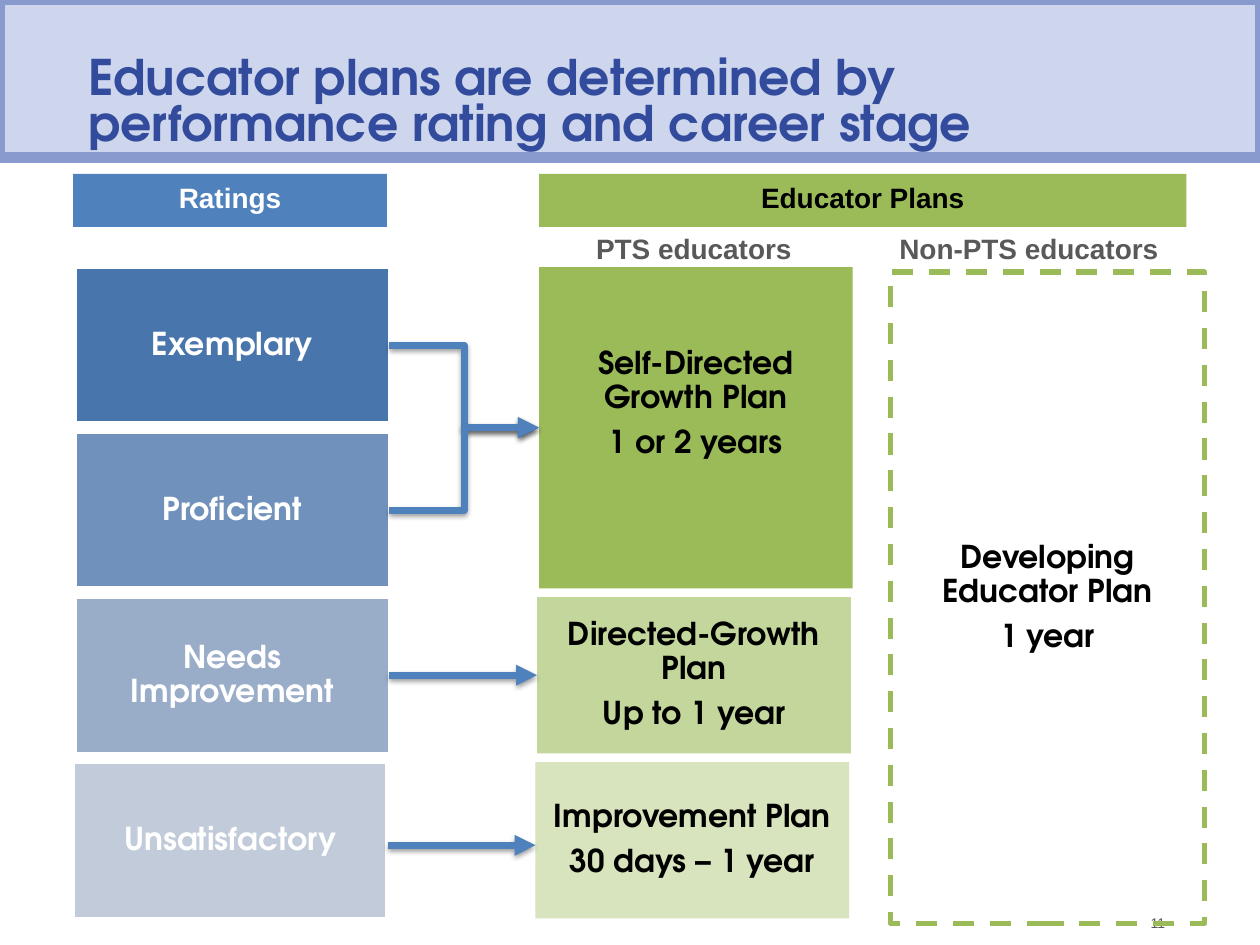
import pptx
import pptx.util
import pptx.dml.color
import pptx.enum.dml
import pptx.enum.shapes
import pptx.enum.text
import pptx.oxml
import pptx.oxml.ns

Pt = pptx.util.Pt
Align = pptx.enum.text.PP_ALIGN
Anchor = pptx.enum.text.MSO_ANCHOR
Link = pptx.enum.shapes.MSO_CONNECTOR

HEX = {
    "band": "CED6ED", "edge": "899ACE", "title": "334B9C",
    "blue": "4F81BD", "green": "9BBB59", "grey": "595959",
    "white": "FFFFFF", "black": "000000",
    "blue1": "4875AC", "blue2": "7091BB", "blue3": "9AADC8", "blue4": "C1CBD9",
    "green2": "C3D69B", "green3": "D7E4BD",
}
HEAD, BODY = "Arial", "TeX Gyre Adventor"

TITLE = "Educator plans are determined by performance rating and career stage"

# text, left, top, width, height, fill, font colour
HEADS = [
    ("Ratings", 41.8, 99.4, 179.3, 30.2, "blue", "white"),
    ("Educator Plans", 308, 99.4, 370, 30.2, "green", "black"),
    ("PTS educators", 308, 129, 177, 36, None, "grey"),
    ("Non-PTS educators", 498, 129, 180, 36, None, "grey"),
]

# text, left, fill
RATINGS = [
    ("Exemplary", 43.2, "blue1"),
    ("Proficient", 43.2, "blue2"),
    ("Needs Improvement", 43.2, "blue3"),
    ("Unsatisfactory", 42, "blue4"),
]

# lines, left, first row, rows spanned, fill, extra inset at the bottom
PLANS = [
    (("Self-Directed Growth Plan", "1 or 2 years"), 308, 0, 2, "green", 27),
    (("Directed-Growth Plan", "Up to 1 year"), 306.9, 2, 1, "green2", 0),
    (("Improvement Plan", "30 days – 1 year"), 305.9, 3, 1, "green3", 0),
]
OPEN_PLAN = ("Developing Educator Plan", "1 year")

# rating, plan, kind of link
JOINS = [(0, 0, Link.ELBOW), (1, 0, Link.ELBOW), (2, 1, Link.STRAIGHT)]

TOP, WIDE, HIGH, STEP = 152.6, 179.3, 89.3, 94.3

SHADOW = (
    '<a:effectLst %s><a:outerShdw blurRad="39370" dist="20320" dir="5400000" '
    'rotWithShape="0"><a:srgbClr val="000000"><a:alpha val="38000"/></a:srgbClr>'
    '</a:outerShdw></a:effectLst>' % pptx.oxml.ns.nsdecls("a")
)
ARROW = '<a:tailEnd %s type="triangle"/>' % pptx.oxml.ns.nsdecls("a")


def color(name):
    return pptx.dml.color.RGBColor.from_string(HEX[name])


def paint(shape, fill=None, line=None, weight=0):
    if fill:
        shape.fill.solid()
        shape.fill.fore_color.rgb = color(fill)
    else:
        shape.fill.background()
    if line:
        shape.line.color.rgb = color(line)
        shape.line.width = Pt(weight)
    else:
        shape.line.fill.background()


def write(shape, lines, face, size, ink, align=Align.CENTER, bold=True,
          anchor=Anchor.MIDDLE, pads=(7.2, 3.6, 7.2, 3.6), space=None, after=0):
    """Fill a shape with paragraphs; pads are left, top, right, bottom."""
    frame = shape.text_frame
    frame.word_wrap = True
    frame.auto_size = pptx.enum.text.MSO_AUTO_SIZE.NONE
    frame.vertical_anchor = anchor
    (frame.margin_left, frame.margin_top,
     frame.margin_right, frame.margin_bottom) = map(Pt, pads)
    frame.text = "\n".join(lines)
    for para in frame.paragraphs:
        para.alignment = align
        para.line_spacing = space
        para.space_before = Pt(0)
        para.space_after = Pt(after)
        font = para.font
        font.name, font.size, font.bold = face, Pt(size), bold
        font.color.rgb = color(ink)


def box(slide, left, top, width, height, **look):
    shape = slide.shapes.add_shape(
        pptx.enum.shapes.MSO_SHAPE.RECTANGLE,
        Pt(left), Pt(top), Pt(width), Pt(height))
    shape.shadow.inherit = False
    paint(shape, **look)
    return shape


def label(shape, lines, ink, extra=0):
    write(shape, lines, BODY, 18, ink, space=0.9, after=6.3,
          pads=(5, 3, 5, 3 + extra))


def arrow(slide, kind, ends=(0, 0, 0, 0)):
    link = slide.shapes.add_connector(kind, *map(Pt, ends))
    link.line.color.rgb = color("blue")
    link.line.width = Pt(4)
    props = link._element.spPr
    props.find(pptx.oxml.ns.qn("a:ln")).append(pptx.oxml.parse_xml(ARROW))
    props.append(pptx.oxml.parse_xml(SHADOW))
    return link


def main():
    deck = pptx.Presentation()
    deck.slide_width, deck.slide_height = Pt(720), Pt(540)
    slide = deck.slides.add_slide(deck.slide_layouts[5])

    number = slide.shapes.add_textbox(Pt(632), Pt(519), Pt(41), Pt(17.3))
    write(number, ["11"], HEAD, 8, "grey", align=Align.RIGHT, bold=False)

    title = slide.shapes.title
    title.left, title.top, title.width, title.height = map(Pt, (0, 0, 720, 90))
    paint(title, "band", "edge", 6)
    write(title, [TITLE], BODY, 28, "title", align=Align.LEFT,
          anchor=Anchor.BOTTOM, pads=(50.4, 0, 36, 3.6), space=Pt(26))

    for text, left, top, width, height, fill, ink in HEADS:
        if fill:
            shape = box(slide, left, top, width, height, fill=fill)
        else:
            shape = slide.shapes.add_textbox(
                Pt(left), Pt(top), Pt(width), Pt(height))
        write(shape, [text], HEAD, 16, ink, anchor=Anchor.TOP)

    rated = []
    for row, (text, left, fill) in enumerate(RATINGS):
        shape = box(slide, left, TOP + row * STEP, WIDE, HIGH,
                    fill=fill, line="white", weight=2)
        label(shape, [text], "white")
        rated.append(shape)

    plans = []
    for lines, left, row, span, fill, extra in PLANS:
        shape = box(slide, left, TOP + row * STEP, WIDE,
                    HIGH + (span - 1) * STEP, fill=fill)
        label(shape, lines, "black", extra)
        plans.append(shape)

    shape = box(slide, 509, 155.5, WIDE, 372.2, line="green", weight=3)
    shape.line.dash_style = pptx.enum.dml.MSO_LINE.DASH
    label(shape, OPEN_PLAN, "black")

    for start, end, kind in JOINS:
        link = arrow(slide, kind)
        link.begin_connect(rated[start], 3)
        link.end_connect(plans[end], 1)
    # The lowest arrow runs just below the middle of its boxes.
    arrow(slide, Link.STRAIGHT, (222, 483, 306, 483))

    deck.save("out.pptx")


if __name__ == "__main__":
    main()
